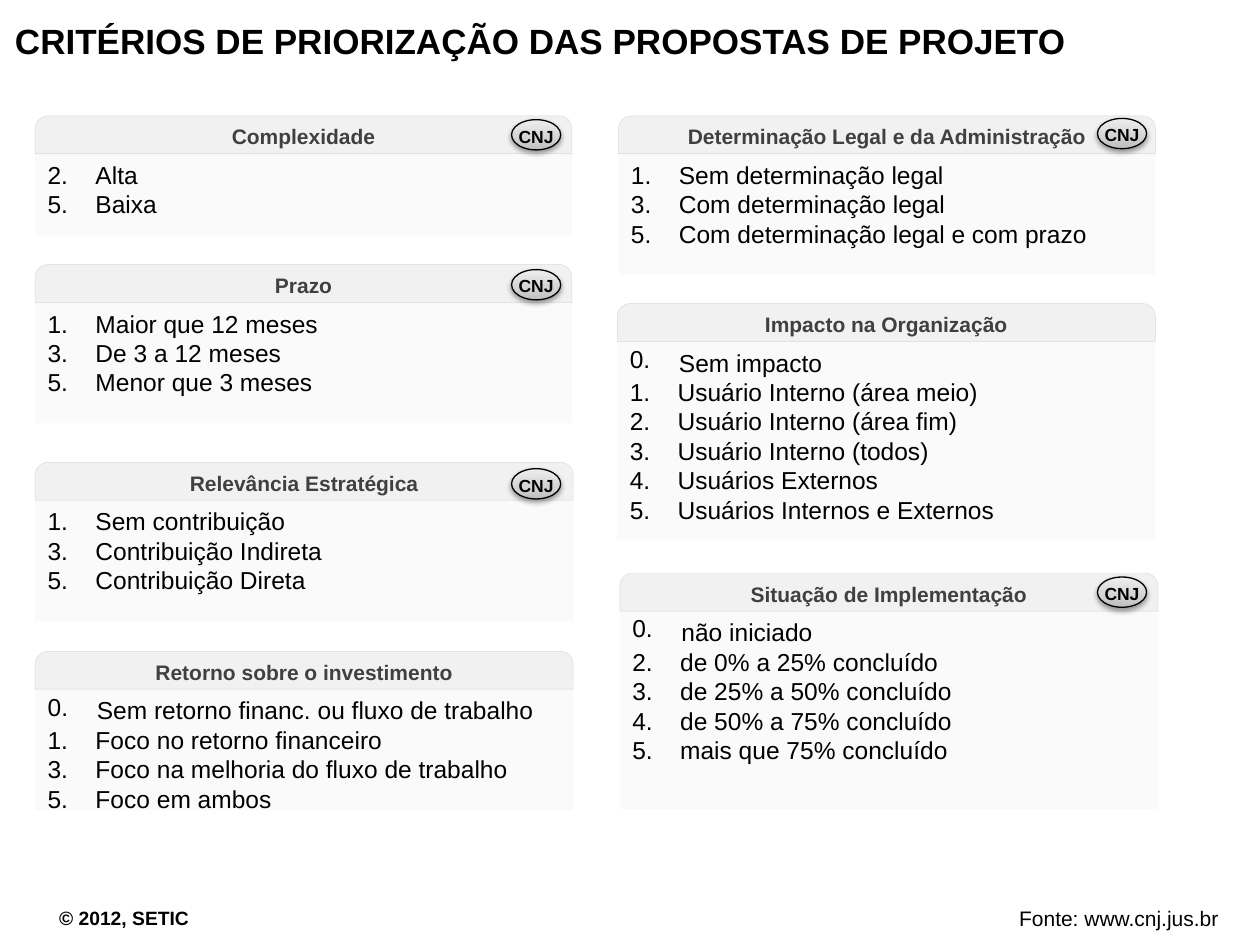
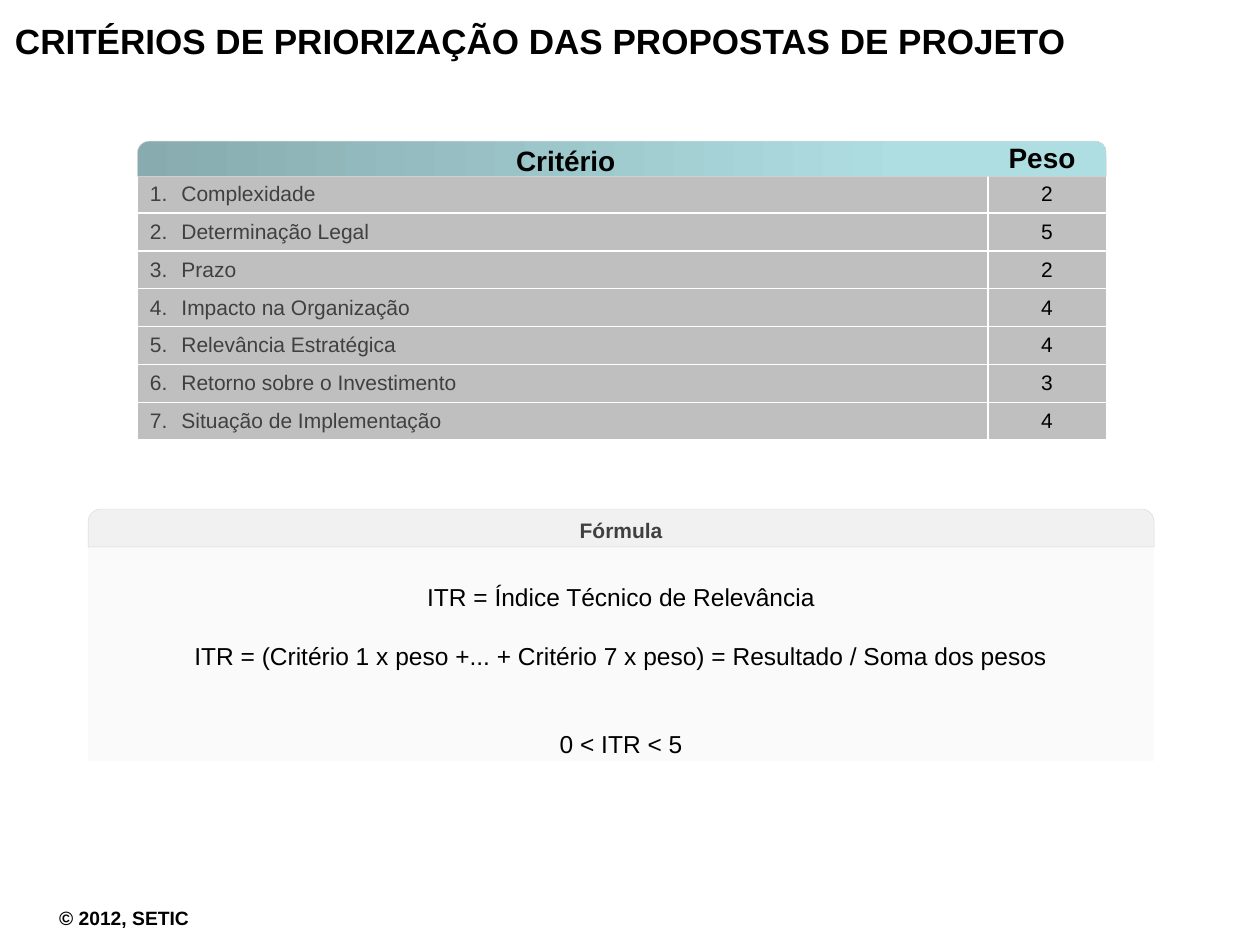
from lxml import etree
from pptx import Presentation
from pptx.dml.color import RGBColor
from pptx.enum.shapes import MSO_SHAPE
from pptx.enum.text import MSO_ANCHOR, PP_ALIGN
from pptx.oxml.ns import qn
from pptx.util import Inches, Pt

RECT, OVAL = MSO_SHAPE.RECTANGLE, MSO_SHAPE.OVAL
TAB = MSO_SHAPE.ROUND_2_SAME_RECTANGLE
LEFT, CENTER = PP_ALIGN.LEFT, PP_ALIGN.CENTER
TOP, MIDDLE = MSO_ANCHOR.TOP, MSO_ANCHOR.MIDDLE

BLACK = RGBColor(0x00, 0x00, 0x00)
DARK = RGBColor(0x40, 0x40, 0x40)
GRAY = RGBColor(0xA6, 0xA6, 0xA6)
CELL = RGBColor(0xBF, 0xBF, 0xBF)
EDGE = RGBColor(0xD9, 0xD9, 0xD9)
WHITE = RGBColor(0xFF, 0xFF, 0xFF)
SILVER = [(0, RGBColor(0xBD, 0xBD, 0xBD)), (35, RGBColor(0xD1, 0xD1, 0xD1)),
          (100, RGBColor(0xEE, 0xEE, 0xEE))]
TEAL = [(0, RGBColor(0x87, 0xAB, 0xAE)), (80, RGBColor(0xAF, 0xDE, 0xE2)),
        (100, RGBColor(0xAF, 0xE0, 0xE4))]
FONT = "Arial"
TITLE = "CRITÉRIOS DE PRIORIZAÇÃO DAS PROPOSTAS DE PROJETO"


def write(frame, lines, size, color=BLACK, bold=False, align=LEFT, nums=(), hang=0.38):
    """Fill a text frame; nums holds the list number of each line, 0 for none."""
    for i, line in enumerate(lines):
        para = frame.paragraphs[0] if i == 0 else frame.add_paragraph()
        para.text = line
        para.alignment = align
        if nums:
            props = para._p.get_or_add_pPr()
            props.set("marL", str(Inches(hang if nums[i] else 0.39)))
            props.set("indent", str(Inches(-hang if nums[i] else 0)))
            if nums[i]:
                etree.SubElement(props, qn("a:buAutoNum"), type="arabicPeriod",
                                 startAt=str(nums[i]))
            else:
                etree.SubElement(props, qn("a:buNone"))
        font = para.runs[0].font
        font.name, font.size, font.bold = FONT, Pt(size), bold
        font.color.rgb = color


def draw(slide, kind, box, alpha=100, stops=(), angle=0, edge=None, width=0.25):
    """Add a shape with a gray tint or, given stops, a gradient."""
    shape = slide.shapes.add_shape(kind, *map(Inches, box))
    shape.shadow.inherit = False
    if stops:
        shape.fill.gradient()
        shape.fill.gradient_angle = angle
        ramp = shape._element.spPr.find(".//" + qn("a:gsLst"))
        for old in list(ramp):
            ramp.remove(old)
        for pos, color in stops:
            stop = etree.SubElement(ramp, qn("a:gs"), pos=str(pos * 1000))
            etree.SubElement(stop, qn("a:srgbClr"), val=str(color))
    else:
        shape.fill.solid()
        shape.fill.fore_color.rgb = GRAY
        tint = shape._element.spPr.find(".//" + qn("a:srgbClr"))
        etree.SubElement(tint, qn("a:alpha"), val=str(alpha * 1000))
    if edge is None:
        shape.line.fill.background()
    else:
        shape.line.color.rgb = edge
        shape.line.width = Pt(width)
    if kind == TAB:
        shape.adjustments[0] = 0.335
    shape.text_frame.word_wrap = True
    return shape


deck = Presentation()
deck.slide_width, deck.slide_height = Inches(10), Inches(7.5)
first, second = [deck.slides.add_slide(deck.slide_layouts[6]) for _ in range(2)]

# Weights of the criteria
weights = [("Complexidade", 2), ("Determinação Legal", 5), ("Prazo", 2),
           ("Impacto na Organização", 4), ("Relevância Estratégica", 4),
           ("Retorno sobre o Investimento", 3), ("Situação de Implementação", 4)]
table = second.shapes.add_table(len(weights), 2, Inches(1.09), Inches(1.39),
                                Inches(7.69), Inches(2.1)).table
table.first_row = table.horz_banding = False
table.columns[0].width, table.columns[1].width = Inches(6.75), Inches(0.94)
for r, (name, weight) in enumerate(weights):
    label, value = table.cell(r, 0), table.cell(r, 1)
    write(label.text_frame, [name], 12, DARK, nums=[r + 1], hang=0.25)
    write(value.text_frame, [str(weight)], 12, align=CENTER)
    for cell in (label, value):
        cell.vertical_anchor = MIDDLE
        props = cell._tc.get_or_add_tcPr()
        for side in ("lnL", "lnR", "lnT", "lnB"):
            rule = etree.SubElement(props, qn("a:" + side), w=str(Pt(1)))
            paint = etree.SubElement(rule, qn("a:solidFill"))
            etree.SubElement(paint, qn("a:srgbClr"), val=str(WHITE))
        cell.fill.solid()
        cell.fill.fore_color.rgb = CELL
draw(second, TAB, (1.09, 1.12, 7.69, 0.28), stops=TEAL, edge=EDGE)

# Cards: slide, left, top, width, body height, badge offset, heading, numbered lines
cards = [
    (first, 0.28, 0.92, 4.26, 0.65, 0.03, "Complexidade", [(2, "Alta"), (5, "Baixa")]),
    (first, 0.28, 2.1, 4.26, 0.96, 0.04, "Prazo",
     [(1, "Maior que 12 meses"), (3, "De 3 a 12 meses"), (5, "Menor que 3 meses")]),
    (first, 0.28, 3.67, 4.27, 0.96, 0.05, "Relevância Estratégica",
     [(1, "Sem contribuição"), (3, "Contribuição Indireta"), (5, "Contribuição Direta")]),
    (first, 0.28, 5.17, 4.27, 0.96, None, "Retorno sobre o investimento",
     [(0, "Sem retorno financ. ou fluxo de trabalho"), (1, "Foco no retorno financeiro"),
      (3, "Foco na melhoria do fluxo de trabalho"), (5, "Foco em ambos")]),
    (first, 4.91, 0.92, 4.26, 0.96, 0.02, "Determinação Legal e da Administração",
     [(1, "Sem determinação legal"), (3, "Com determinação legal"),
      (5, "Com determinação legal e com prazo")]),
    (first, 4.9, 2.41, 4.27, 1.57, None, "Impacto na Organização",
     [(0, "Sem impacto"), (1, "Usuário Interno (área meio)"),
      (2, "Usuário Interno (área fim)"), (3, "Usuário Interno (todos)"),
      (4, "Usuários Externos"), (5, "Usuários Internos e Externos")]),
    (first, 4.92, 4.55, 4.27, 1.57, 0.03, "Situação de Implementação",
     [(0, "não iniciado"), (2, "de 0% a 25% concluído"), (3, "de 25% a 50% concluído"),
      (4, "de 50% a 75% concluído"), (5, "mais que 75% concluído")]),
    (second, 0.7, 4.04, 8.46, 1.7, None, "Fórmula",
     ["ITR = Índice Técnico de Relevância",
      "ITR = (Critério 1 x peso +... + Critério 7 x peso) = Resultado / Soma dos pesos",
      "0 < ITR < 5"]),
]
# Text boxes: slide, box, text, size, bold, align, anchor
notes = [
    (second, (1.07, 1.09, 6.84, 0.37), "Critério", 16, True, CENTER, TOP),
    (second, (7.76, 1.07, 1.02, 0.37), "Peso", 16, True, CENTER, TOP),
    (first, (7.99, 7.14, 1.89, 0.23), "Fonte: www.cnj.jus.br", 12, False, LEFT, TOP),
]
for slide, left, top, width, height, drop, name, items in cards:
    head = draw(slide, TAB, (left, top, width, 0.3), alpha=15, edge=EDGE)
    frame = head.text_frame
    frame.margin_left = frame.margin_right = Inches(0.04)
    frame.margin_top = frame.margin_bottom = Inches(0.04)
    frame.vertical_anchor = MIDDLE
    write(frame, [name], 12, DARK, True, CENTER)

    base = top + 0.3
    frame = draw(slide, RECT, (left, base, width, height), alpha=5).text_frame
    frame.vertical_anchor = TOP
    if slide is second:
        frame.margin_top = Inches(0.28)
        write(frame, items, 14, align=CENTER)
        for para, gap in zip(frame.paragraphs[1:], (16.8, 33.6)):
            para.space_before = Pt(gap)
    else:
        nums, lines = zip(*items)
        write(frame, lines, 14, nums=nums)
        if nums[0] == 0:
            notes.append((slide, (left, base - 0.03, 0.38, 0.34), "0.", 14, False, LEFT, TOP))

    if drop is not None:
        spot = 4.06 if left < 4 else 8.71
        badge = draw(slide, OVAL, (spot, top + drop, 0.39, 0.24), stops=SILVER,
                     angle=90, edge=BLACK, width=0.75)
        glow = etree.SubElement(badge._element.spPr.find(qn("a:effectLst")),
                                qn("a:outerShdw"), blurRad=str(Pt(3.1)),
                                dist=str(Pt(1.6)), dir="5400000", rotWithShape="0")
        tone = etree.SubElement(glow, qn("a:srgbClr"), val=str(BLACK))
        etree.SubElement(tone, qn("a:alpha"), val="38000")
        frame = badge.text_frame
        frame.margin_left = frame.margin_right = frame.margin_bottom = 0
        frame.margin_top = Inches(0.02)
        frame.word_wrap = False
        frame.vertical_anchor = MIDDLE
        write(frame, ["CNJ"], 10, bold=True, align=CENTER)

for slide in (first, second):
    notes += [(slide, (-0.29, 0.05, 9.16, 0.55), TITLE, 20, True, CENTER, MIDDLE),
              (slide, (0.37, 7.14, 1.28, 0.29), "© 2012, SETIC", 11, True, LEFT, TOP)]
for slide, box, text, size, bold, align, anchor in notes:
    frame = slide.shapes.add_textbox(*map(Inches, box)).text_frame
    frame.word_wrap = True
    frame.vertical_anchor = anchor
    write(frame, [text], size, bold=bold, align=align)
    if text == TITLE:
        props = frame.paragraphs[0].runs[0].font._element
        effect = etree.Element(qn("a:effectLst"))
        props.find(qn("a:solidFill")).addnext(effect)
        glow = etree.SubElement(effect, qn("a:outerShdw"), blurRad=str(Pt(3)),
                                dist=str(Pt(3)), dir="2700000")
        tone = etree.SubElement(glow, qn("a:srgbClr"), val=str(BLACK))
        etree.SubElement(tone, qn("a:alpha"), val="43000")

deck.save("out.pptx")
